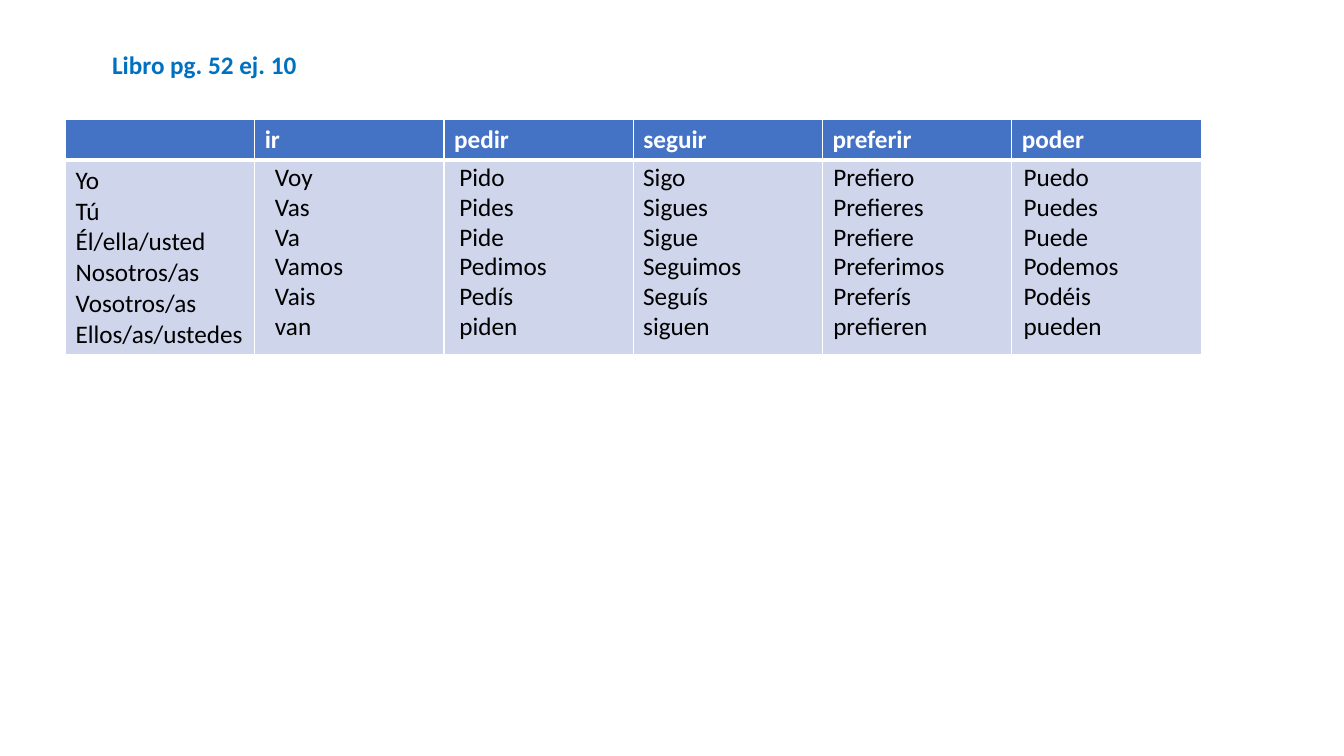
from lxml.etree import SubElement
from pptx import Presentation
from pptx.dml.color import RGBColor
from pptx.enum.text import MSO_ANCHOR as Anchor, MSO_AUTO_SIZE as AutoSize, PP_ALIGN as Align
from pptx.oxml.ns import qn
from pptx.util import Cm, Pt

WHITE, BLACK = "FFFFFF", "000000"
HEADER_BLUE, BODY_BLUE, TITLE_BLUE = "4472C4", "CFD5EA", "0070C0"
HEADER_HEIGHT, BODY_HEIGHT = 1.03, 4.84
PRONOUNS = ["Yo", "Tú", "Él/ella/usted", "Nosotros/as", "Vosotros/as", "Ellos/as/ustedes"]
VERBS = [
    ("ir", 0.26, 2.41, ["Voy", "Vas", "Va", "Vamos", "Vais", "van"]),
    ("pedir", 0.14, 3.48, ["Pido", "Pides", "Pide", "Pedimos", "Pedís", "piden"]),
    ("seguir", 0, 3.63, ["Sigo", "Sigues", "Sigue", "Seguimos", "Seguís", "siguen"]),
    ("preferir", 0.02, 3.63,
     ["Prefiero", "Prefieres", "Prefiere", "Preferimos", "Preferís", "prefieren"]),
    ("poder", 0.05, 3.63, ["Puedo", "Puedes", "Puede", "Podemos", "Podéis", "pueden"]),
]


def color(hex_code):
    return RGBColor.from_string(hex_code)


def write_lines(frame, lines, hex_code, bold=False, spacing=None):
    for index, line in enumerate(lines):
        paragraph = frame.add_paragraph() if index else frame.paragraphs[0]
        paragraph.text = line
        paragraph.alignment = Align.LEFT
        paragraph.line_spacing = spacing
        font = paragraph.font
        font.name, font.size, font.bold = "Calibri", Pt(18), bold
        font.color.rgb = color(hex_code)


def format_cell(cell, lines, fill, hex_code, bold, top, bottom):
    properties = cell._tc.get_or_add_tcPr()
    for side, width in (("L", 1), ("R", 1), ("T", top), ("B", bottom)):
        border = SubElement(properties, qn(f"a:ln{side}"), w=str(Pt(width)))
        SubElement(SubElement(border, qn("a:solidFill")), qn("a:srgbClr"), val=WHITE)
    cell.fill.solid()
    cell.fill.fore_color.rgb = color(fill)
    write_lines(cell.text_frame, lines, hex_code, bold)


def add_heading(slide, left, top, width, height):
    heading = slide.shapes.title
    heading.left, heading.top, heading.width, heading.height = map(Cm, (left, top, width, height))
    frame = heading.text_frame
    frame.word_wrap = False
    frame.auto_size = AutoSize.NONE
    frame.vertical_anchor = Anchor.TOP
    write_lines(frame, ["Libro pg. 52 ej. 10"], TITLE_BLUE, bold=True)


def add_conjugations(slide, left, top, width):
    columns = len(VERBS) + 1
    column_width = width / columns
    grid = slide.shapes.add_table(2, columns, Cm(left), Cm(top), Cm(width),
                                  Cm(HEADER_HEIGHT + BODY_HEIGHT)).table
    grid.horz_banding = False
    grid.rows[0].height, grid.rows[1].height = Cm(HEADER_HEIGHT), Cm(BODY_HEIGHT)
    headers = [""] + [verb for verb, *_ in VERBS]
    for column, header in enumerate(headers):
        pronouns = [""] if column else PRONOUNS
        format_cell(grid.cell(0, column), [header], HEADER_BLUE, WHITE, True, 1, 3)
        format_cell(grid.cell(1, column), pronouns, BODY_BLUE, BLACK, False, 3, 1)

    for column, (_, offset, box_width, forms) in enumerate(VERBS, start=1):
        answers = slide.shapes.add_textbox(Cm(left + column * column_width + offset),
                                           Cm(top + 0.98), Cm(box_width), Cm(4.88))
        answers.text_frame.word_wrap = True
        write_lines(answers.text_frame, forms, BLACK, spacing=0.98)


def main():
    deck = Presentation()
    deck.slide_width, deck.slide_height = Cm(33.87), Cm(19.05)
    slide = deck.slides.add_slide(deck.slide_layouts[5])
    add_heading(slide, 2.57, 1.12, 5.54, 1.02)
    add_conjugations(slide, 1.65, 3.01, 28.62)
    deck.save("out.pptx")


if __name__ == "__main__":
    main()
